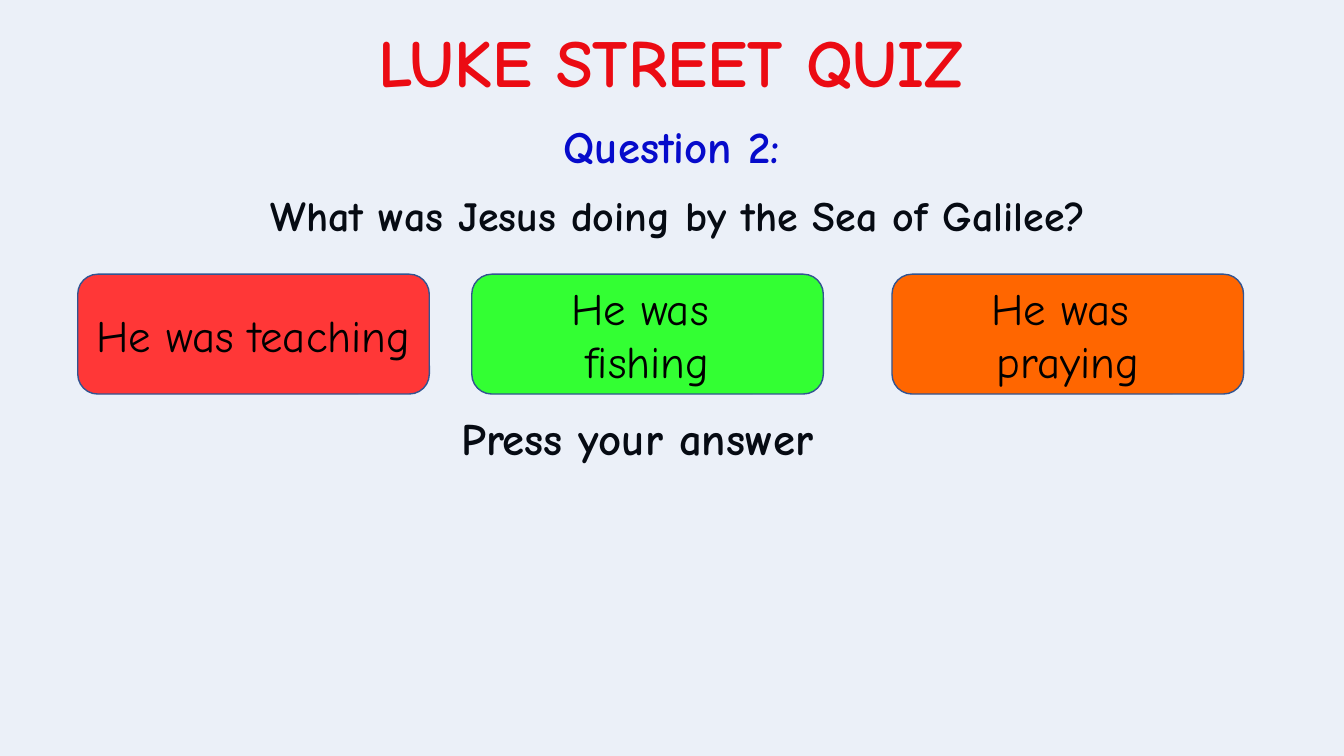
from lxml import etree
from pptx import Presentation
from pptx import util as u
from pptx.dml.color import RGBColor
from pptx.enum import shapes, text
from pptx.oxml.ns import qn

COLOURS = {
    "title": "FF0000", "question": "0000CC", "ink": "000000",
    "tint": "4472C4", "outline": "325491",
    "red": "FF3737", "green": "33FF33", "orange": "FF6600",
}


class QuizPage:
    """Holds the quiz style and the slide being built."""

    font = "Comic Neue"

    def __init__(self, deck):
        self.deck = deck
        self.page = deck.slides.add_slide(deck.slide_layouts[5])

    def colour(self, name):
        return RGBColor.from_string(COLOURS[name])

    def set_words(self, box, lines, size, colour, bold=True, align=text.PP_ALIGN.CENTER,
                  anchor=text.MSO_ANCHOR.TOP, spacing=1.0, before=0):
        frame = box.text_frame
        frame.text = "\n".join(lines)
        frame.word_wrap = True
        frame.auto_size = text.MSO_AUTO_SIZE.NONE
        frame.vertical_anchor = anchor
        for para in frame.paragraphs:
            para.alignment = align
            para.line_spacing = spacing
            para.space_before = u.Pt(before)
            para.font.name = self.font
            para.font.size = u.Pt(size)
            para.font.bold = bold
            para.font.color.rgb = self.colour(colour)

    def title(self, words, left, top, width, height):
        box = self.page.shapes.title
        box.left, box.top = u.Cm(left), u.Cm(top)
        box.width, box.height = u.Cm(width), u.Cm(height)
        self.set_words(box, [words], 48, "title")
        box.text_frame.word_wrap = False

    def label(self, words, left, top, width, height, size, colour="ink", **style):
        box = self.page.shapes.add_textbox(u.Cm(left), u.Cm(top), u.Cm(width), u.Cm(height))
        self.set_words(box, [words], size, colour, **style)

    def shape(self, kind, left, top, width, height, fill):
        box = self.page.shapes.add_shape(kind, left, top, width, height)
        box.shadow.inherit = False
        box.fill.solid()
        box.fill.fore_color.rgb = self.colour(fill)
        return box

    def tint(self, percent):
        veil = self.shape(shapes.MSO_SHAPE.RECTANGLE, 0, 0,
                          self.deck.slide_width, self.deck.slide_height, "tint")
        veil.line.fill.background()
        shade = veil.element.spPr.find(qn("a:solidFill"))[0]
        etree.SubElement(shade, qn("a:alpha"), val=str(percent * 1000))

    def answer(self, lines, left, fill):
        button = self.shape(shapes.MSO_SHAPE.ROUNDED_RECTANGLE, u.Cm(left), u.Cm(6.91),
                            u.Cm(8.86), u.Cm(3.02), fill)
        button.line.color.rgb = self.colour("outline")
        button.line.width = u.Pt(1)
        self.set_words(button, lines, 32, "ink", bold=False, anchor=text.MSO_ANCHOR.MIDDLE)


def main():
    deck = Presentation()
    deck.slide_width, deck.slide_height = u.Cm(33.87), u.Cm(19.05)
    quiz = QuizPage(deck)
    quiz.title("LUKE STREET QUIZ", 7.92, 0.38, 17.98, 2.31)
    quiz.label("Press your answer", 11.38, 10.39, 17.09, 1.83, 32,
               align=text.PP_ALIGN.LEFT, spacing=0.9, before=7.5)
    quiz.label("Question 2:", 11.33, 2.87, 11.2, 1.63, 32, "question")
    quiz.label("What was Jesus doing by the Sea of Galilee?", 0.71, 4.5, 32.77, 3.02, 30,
               spacing=u.Pt(40), before=10)
    quiz.tint(10)
    for lines, left, fill in (
        (["He was teaching"], 1.96, "red"),
        (["He was ", "fishing"], 11.89, "green"),
        (["He was ", "praying"], 22.48, "orange"),
    ):
        quiz.answer(lines, left, fill)
    deck.save("out.pptx")


if __name__ == "__main__":
    main()
